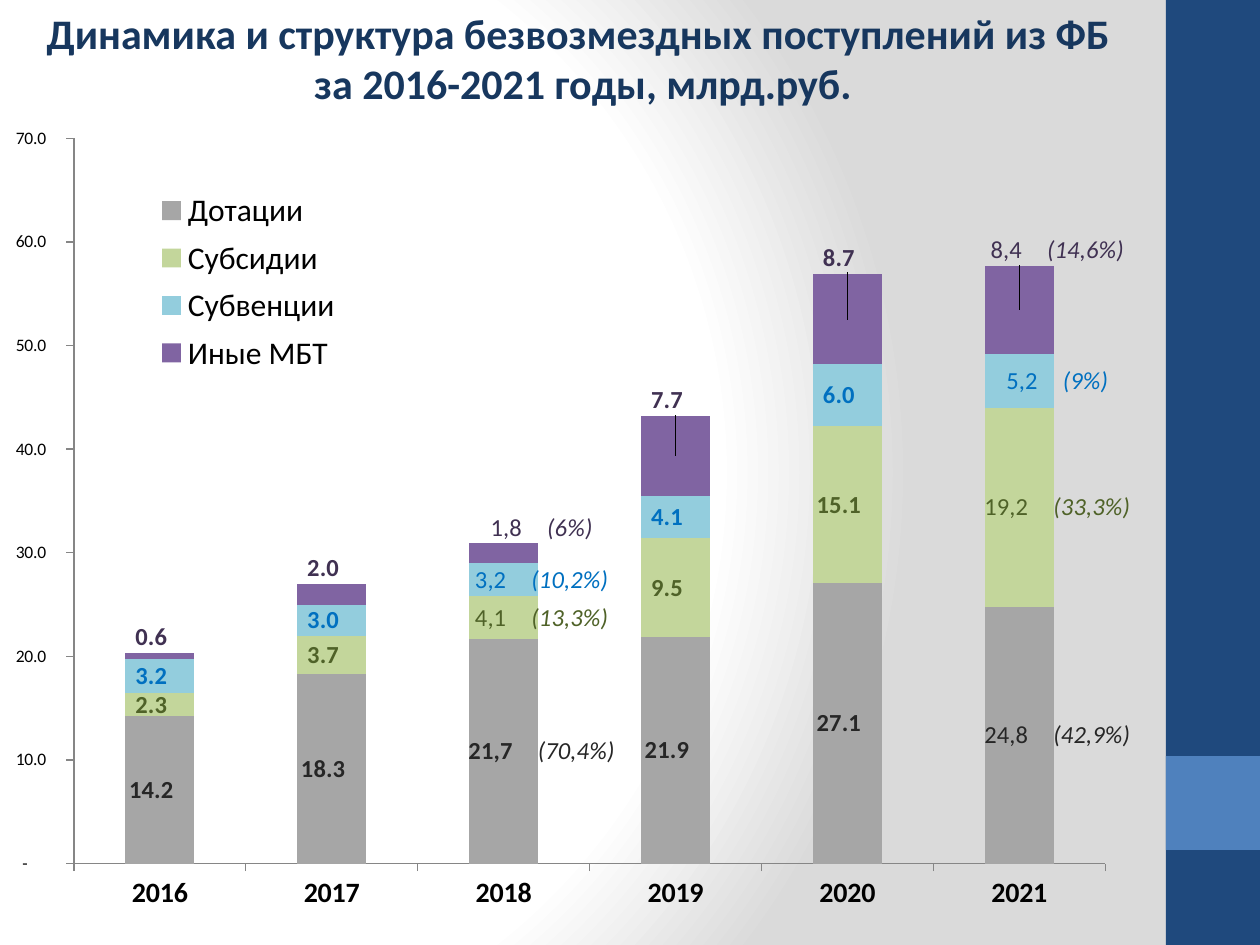
from lxml import etree
from pptx import Presentation
from pptx.chart.data import CategoryChartData
from pptx.dml.color import RGBColor
from pptx.enum.chart import XL_CHART_TYPE, XL_LEGEND_POSITION, XL_TICK_MARK
from pptx.enum.shapes import MSO_SHAPE
from pptx.enum.text import PP_ALIGN
from pptx.oxml import parse_xml
from pptx.oxml.ns import nsdecls, qn
from pptx.util import Emu, Pt

STACKED = XL_CHART_TYPE.COLUMN_STACKED
BOTTOM = XL_LEGEND_POSITION.BOTTOM
OUTSIDE, NO_TICK = XL_TICK_MARK.OUTSIDE, XL_TICK_MARK.NONE
RECTANGLE = MSO_SHAPE.RECTANGLE
CENTER = PP_ALIGN.CENTER

FONT = "Calibri"
TITLE = ["Динамика и структура безвозмездных поступлений из ФБ ",
         "за 2016-2021 годы, млрд.руб."]
SIDE_BANDS = [((1166, 0, 94, 945), "1F497D"), ((1166, 756, 94, 94), "4F81BD")]
BACKGROUND_STOPS = [(0, "FFFFFF"), (75, "FFFFFF"), (100, "DADADA")]
BACKGROUND_FOCUS = {"l": 20, "t": 50, "r": 100, "b": 50}

YEARS = ["2016", "2017", "2018", "2019", "2020", "2021"]
# name, fill, label colour, values, {year index: (amount, share)}
TRANSFERS = [
    ("Дотации", "A6A6A6", "262626", [14.2, 18.3, 21.7, 21.9, 27.1, 24.8],
     {2: ("21,7", "(70,4%)"), 5: ("24,8", "(42,9%)")}),
    ("Субсидии", "C3D69B", "4F6228", [2.3, 3.7, 4.1, 9.5, 15.1, 19.2],
     {2: ("4,1", "(13,3%)"), 5: ("19,2", "(33,3%)")}),
    ("Субвенции", "93CDDD", "0070C0", [3.2, 3.0, 3.2, 4.1, 6.0, 5.2],
     {2: ("3,2", "(10,2%)"), 5: ("5,2", "(9%)")}),
    ("Иные МБТ", "8064A2", "403152", [0.6, 2.0, 1.9, 7.7, 8.7, 8.5],
     {2: ("1,8", "(6%)"), 5: ("8,4", "(14,6%)")}),
]
BOLD_AMOUNTS = {"21,7"}
NUMBER_FORMAT = (r'_-* #,##0.0\ _₽_-;\-* #,##0.0\ _₽_-;'
                 r'_-* "-"??\ _₽_-;_-@_-')

CHART_BOX = (0, 116, 1155, 829)
AXIS_MAX = 70
PLOT = {"x": 0.064, "y": 0.027, "w": 0.893, "h": 0.875}
LEGEND = {"x": 0.125, "y": 0.08, "w": 0.18, "h": 0.24}
SHARE_SHIFT = 38
TOP_LABEL_GAP = 16


def px(n):
    return Emu(round(n * 914400 / 126))


def rgb(value):
    return RGBColor.from_string(value)


def style(font, size, color, bold=False, italic=False):
    font.name, font.size = FONT, Pt(size)
    font.bold, font.italic = bold, italic
    font.color.rgb = rgb(color)


def manual_layout(values, inner=False, edge=True):
    """Chart layout in fractions; without edge the values are offsets."""
    layout = parse_xml(f'<c:layout {nsdecls("c")}><c:manualLayout/></c:layout>')
    entries = [("layoutTarget", "inner")] if inner else []
    if edge:
        entries += [("xMode", "edge"), ("yMode", "edge")]
    for tag, value in entries + list(values.items()):
        etree.SubElement(layout[0], qn(f"c:{tag}")).set("val", str(value))
    return layout


def paint_background(slide):
    slide.background.fill.gradient()
    gradient = slide._element.xpath(".//p:bg//a:gradFill")[0]
    stops = "".join(f'<a:gs pos="{pos * 1000}"><a:srgbClr val="{color}"/></a:gs>'
                    for pos, color in BACKGROUND_STOPS)
    focus = " ".join(f'{side}="{pct * 1000}"'
                     for side, pct in BACKGROUND_FOCUS.items())
    gradient.getparent().replace(gradient, parse_xml(
        f'<a:gradFill {nsdecls("a")} rotWithShape="1"><a:gsLst>{stops}</a:gsLst>'
        f'<a:path path="circle"><a:fillToRect {focus}/></a:path></a:gradFill>'))


def add_bands(slide):
    for box, color in SIDE_BANDS:
        band = slide.shapes.add_shape(RECTANGLE, *map(px, box))
        band.shadow.inherit = False
        band.fill.solid()
        band.fill.fore_color.rgb = rgb(color)
        band.line.fill.background()


def add_title(slide):
    frame = slide.shapes.add_textbox(*map(px, (0, 1, 1166, 115))).text_frame
    frame.word_wrap = True
    frame.text = "\n".join(TITLE)
    for paragraph in frame.paragraphs:
        paragraph.alignment = CENTER
        style(paragraph.runs[0].font, 24, "17375E", bold=True)


def label_point(series, index, color, texts, dx, dy):
    label = series.points[index].data_label
    if texts:
        amount, share = texts
        paragraph = label.text_frame.paragraphs[0]
        for text, bold, italic in ((amount + "\u2003", amount in BOLD_AMOUNTS, False),
                                   (share, False, True)):
            run = paragraph.add_run()
            run.text = text
            style(run.font, 14, color, bold, italic)
    else:
        style(label.font, 14, color, bold=True)
    point = series._element.xpath(f'.//c:dLbl[c:idx/@val="{index}"]')[0]
    offset = {"x": round(dx / CHART_BOX[2], 3), "y": round(dy / CHART_BOX[3], 3)}
    point.insert(1, manual_layout(offset, edge=False))


def format_series(series, color, label_color, values, shares, is_top):
    series.format.fill.solid()
    series.format.fill.fore_color.rgb = rgb(color)
    labels = series.data_labels
    labels.show_value = True
    labels.number_format, labels.number_format_is_linked = NUMBER_FORMAT, False
    style(labels.font, 14, label_color, bold=True)
    unit = CHART_BOX[3] * PLOT["h"] / AXIS_MAX
    for index, value in enumerate(values):
        texts = shares.get(index)
        if texts or is_top:
            dx = SHARE_SHIFT if texts else 0
            dy = -(TOP_LABEL_GAP + value * unit / 2) if is_top else 0
            label_point(series, index, label_color, texts, dx, dy)


def format_axes(chart):
    for axis, size, bold in ((chart.category_axis, 16, True),
                             (chart.value_axis, 10, False)):
        axis.has_major_gridlines = False
        axis.major_tick_mark, axis.minor_tick_mark = OUTSIDE, NO_TICK
        axis.format.line.color.rgb = rgb("868686")
        style(axis.tick_labels.font, size, "000000", bold)
    amounts = chart.value_axis
    amounts.minimum_scale, amounts.maximum_scale = 0, AXIS_MAX
    amounts.major_unit = 10
    amounts.tick_labels.number_format = NUMBER_FORMAT
    amounts.tick_labels.number_format_is_linked = False


def add_transfers_chart(slide):
    data = CategoryChartData(number_format=NUMBER_FORMAT)
    data.categories = YEARS
    for name, _, _, values, _ in TRANSFERS:
        data.add_series(name, values)
    chart = slide.shapes.add_chart(STACKED, *map(px, CHART_BOX), data).chart
    chart.has_title = False
    style(chart.font, 10, "000000")
    plot = chart.plots[0]
    plot.gap_width, plot.overlap = 150, 100
    plot.vary_by_categories = False
    for series, row in zip(plot.series, TRANSFERS):
        format_series(series, *row[1:], is_top=row is TRANSFERS[-1])
    format_axes(chart)

    chart.has_legend = True
    legend = chart.legend
    legend.position, legend.include_in_layout = BOTTOM, False
    style(legend.font, 18, "000000")
    for parent, layout, place in (
            (legend._element, manual_layout(LEGEND), 1),
            (chart._chartSpace.chart.plotArea, manual_layout(PLOT, inner=True), 0)):
        for old in parent.findall(qn("c:layout")):
            parent.remove(old)
        parent.insert(place, layout)


def main():
    deck = Presentation()
    deck.slide_width, deck.slide_height = px(1260), px(945)
    slide = deck.slides.add_slide(deck.slide_layouts[6])
    paint_background(slide)
    add_bands(slide)
    add_title(slide)
    add_transfers_chart(slide)
    deck.save("out.pptx")


if __name__ == "__main__":
    main()
